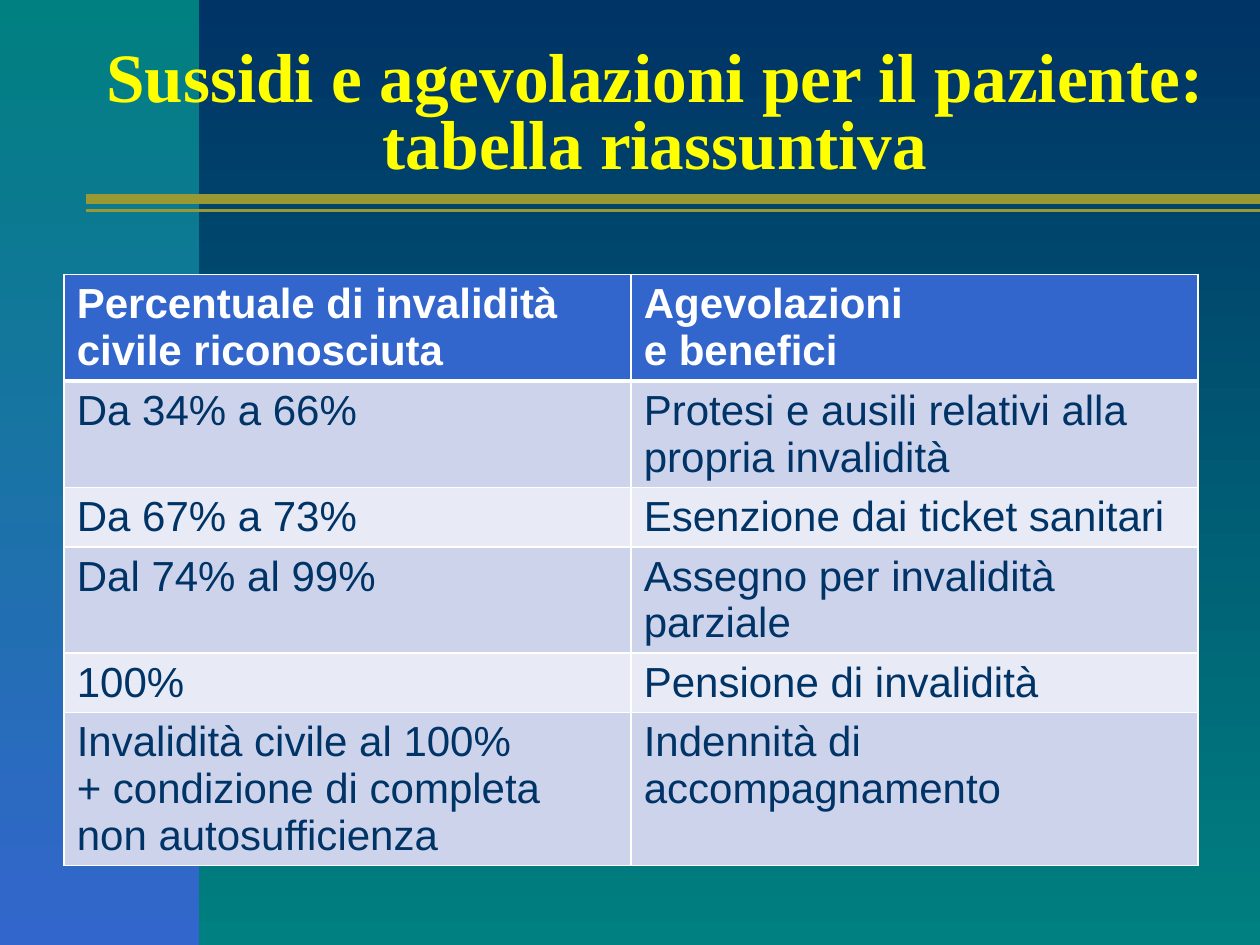
from lxml import etree
from pptx import Presentation
from pptx.dml.color import RGBColor
from pptx.enum import shapes, text
from pptx.oxml import parse_xml
from pptx.oxml.ns import nsdecls, qn
from pptx.util import Inches, Pt

COLORS = {
    "navy": "003366", "teal": "008080", "blue": "3366CC", "gold": "999933",
    "yellow": "FFFF00", "white": "FFFFFF", "row_dark": "CED3EC",
    "row_light": "E8EAF6", "shadow": "002244",
}
ROWS = [  # height, percentage, benefit
    (0.84, "Percentuale di invalidità\ncivile riconosciuta", "Agevolazioni\ne benefici"),
    (0.84, "Da 34% a 66%", "Protesi e ausili relativi alla\npropria invalidità"),
    (0.47, "Da 67% a 73%", "Esenzione dai ticket sanitari"),
    (0.84, "Dal 74% al 99%", "Assegno per invalidità parziale"),
    (0.47, "100%", "Pensione di invalidità"),
    (1.21, "Invalidità civile al 100%\n+ condizione di completa\nnon autosufficienza",
     "Indennità di\naccompagnamento"),
]


def rgb(name):
    return RGBColor.from_string(COLORS[name])


class SlideBuilder:
    def __init__(self, slide):
        self.slide = slide
        self.shapes = slide.shapes

    def gradient(self, fill, top, bottom):
        fill.gradient()
        fill.gradient_angle = 270
        for stop, name in zip(fill.gradient_stops, (top, bottom)):
            stop.color.rgb = rgb(name)

    def font(self, font, color, **values):
        for key, value in values.items():
            setattr(font, key, value)
        font.color.rgb = rgb(color)

    def band(self, left, top, width, height, colors):
        band = self.shapes.add_shape(
            shapes.MSO_SHAPE.RECTANGLE, *map(Inches, (left, top, width, height)))
        band.shadow.inherit = False
        band.line.fill.background()
        self.gradient(band.fill, *colors)

    def rule(self, y, weight):
        rule = self.shapes.add_connector(
            shapes.MSO_CONNECTOR.STRAIGHT, Inches(0.68), Inches(y), Inches(10), Inches(y))
        rule.line.color.rgb = rgb("gold")
        rule.line.width = Pt(weight)
        etree.SubElement(rule._element.spPr, qn("a:effectLst"))

    def title(self, wording, left, top, width, height):
        title = self.shapes.title
        place = dict(left=left, top=top, width=width, height=height)
        for key, value in place.items():
            setattr(title, key, Inches(value))
        frame = title.text_frame
        frame.text = wording
        frame.word_wrap = True
        frame.auto_size = text.MSO_AUTO_SIZE.NONE
        frame.vertical_anchor = text.MSO_ANCHOR.BOTTOM
        paragraph = frame.paragraphs[0]
        paragraph.alignment = text.PP_ALIGN.CENTER
        paragraph.line_spacing = 0.8
        run = paragraph.runs[0]
        self.font(run.font, "yellow", name="Times New Roman", size=Pt(39.6), bold=True)
        run._r.rPr.find(qn("a:solidFill")).addnext(parse_xml(
            f'<a:effectLst {nsdecls("a")}><a:outerShdw dist="38100" dir="2700000">'
            f'<a:srgbClr val="{COLORS["shadow"]}"/></a:outerShdw></a:effectLst>'))
        # Bring the title in front of the band
        self.shapes._spTree.append(title._element)

    def borders(self, cell, top, bottom):
        properties = cell._tc.get_or_add_tcPr()
        weights = {"lnL": 1, "lnR": 1, "lnT": top, "lnB": bottom}
        for position, (side, weight) in enumerate(weights.items()):
            properties.insert(position, parse_xml(
                f'<a:{side} {nsdecls("a")} w="{Pt(weight)}"><a:solidFill>'
                f'<a:srgbClr val="{COLORS["white"]}"/></a:solidFill></a:{side}>'))

    def table(self, rows, left, top, width):
        height = sum(row[0] for row in rows)
        table = self.shapes.add_table(
            len(rows), 2, *map(Inches, (left, top, width, height))).table
        for r, (row_height, *entries) in enumerate(rows):
            table.rows[r].height = Inches(row_height)
            header = r == 0
            fill = "blue" if header else "row_dark" if r % 2 else "row_light"
            for cell, entry in zip(table.rows[r].cells, entries):
                cell.text = entry
                cell.fill.solid()
                cell.fill.fore_color.rgb = rgb(fill)
                for paragraph in cell.text_frame.paragraphs:
                    self.font(paragraph.runs[0].font, "white" if header else "navy",
                              name="Arial", size=Pt(24), bold=header)
                self.borders(cell, top=3 if r == 1 else 1, bottom=3 if header else 1)


def main():
    deck = Presentation()
    deck.slide_width, deck.slide_height = Inches(10), Inches(7.5)
    builder = SlideBuilder(deck.slides.add_slide(deck.slide_layouts[5]))

    # Background and side band
    builder.gradient(builder.slide.background.fill, "navy", "teal")
    builder.band(0, 0, 1.58, 7.5, ("teal", "blue"))

    # Title with double rule
    builder.rule(1.67, 2)
    builder.rule(1.58, 6)
    builder.title("Sussidi e agevolazioni per il paziente: tabella riassuntiva",
                  0.65, 0.29, 9.1, 1.21)

    # Benefits by degree of invalidity
    builder.table(ROWS, 0.51, 2.18, 9)

    deck.save("out.pptx")


if __name__ == "__main__":
    main()
